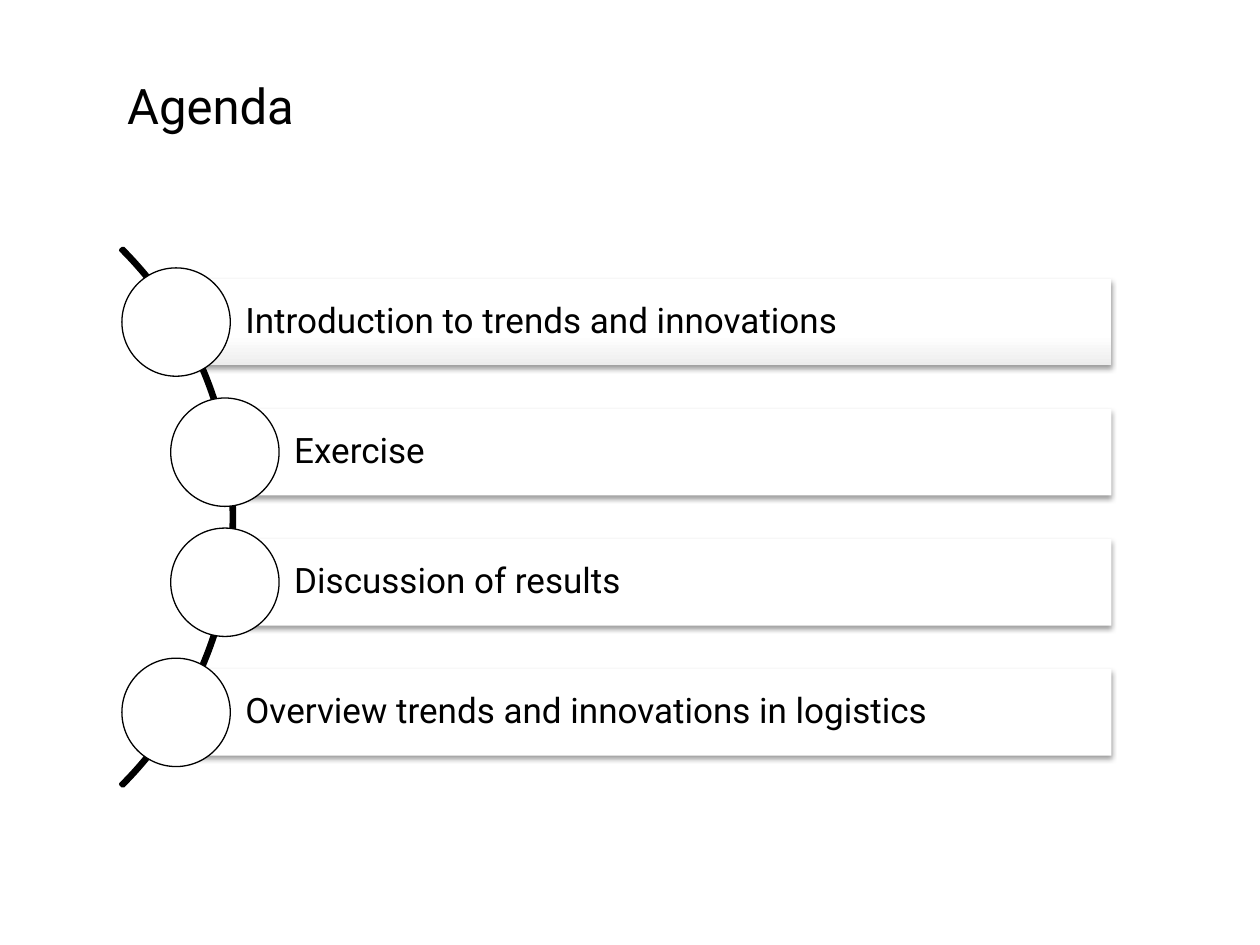
from dataclasses import dataclass
from math import sqrt

from lxml import etree
from pptx import Presentation
from pptx.dml.color import RGBColor
from pptx.enum.shapes import MSO_SHAPE
from pptx.enum.text import MSO_ANCHOR, PP_ALIGN
from pptx.oxml.ns import qn
from pptx.util import Inches, Pt

BLOCK_ARC, OVAL, RECTANGLE = MSO_SHAPE.BLOCK_ARC, MSO_SHAPE.OVAL, MSO_SHAPE.RECTANGLE
MIDDLE, LEFT = MSO_ANCHOR.MIDDLE, PP_ALIGN.LEFT


@dataclass(frozen=True)
class Theme:
    font: str = "Roboto"
    ink: RGBColor = RGBColor(0, 0, 0)
    paper: RGBColor = RGBColor(0xFF, 0xFF, 0xFF)
    shade: RGBColor = RGBColor(0xED, 0xED, 0xED)
    title_size: Pt = Pt(28)
    item_size: Pt = Pt(20)


@dataclass(frozen=True)
class Box:
    """A rectangle in inches."""
    left: float
    top: float
    width: float
    height: float

    def place(self):
        return [Inches(side) for side in (self.left, self.top, self.width, self.height)]


THEME = Theme()
TITLE_BOX = Box(0.91, 0.36, 6.62, 0.95)
AGENDA_BOX = Box(0.97, 2.04, 7.85, 4.13)
ITEMS = [
    "Introduction to trends and innovations",
    "Exercise",
    "Discussion of results",
    "Overview trends and innovations in logistics",
]


def write(frame, text, size):
    frame.word_wrap = True
    frame.vertical_anchor = MIDDLE
    para = frame.paragraphs[0]
    para.text = text
    para.alignment = LEFT
    para.font.name = THEME.font
    para.font.size = size
    para.font.color.rgb = THEME.ink
    return para


def add_title(page, box, text):
    title = page.shapes.title
    title.left, title.top, title.width, title.height = box.place()
    write(title.text_frame, text, THEME.title_size)


def add_plain(page, kind, box):
    shape = page.shapes.add_shape(kind, *box.place())
    shape.shadow.inherit = False
    return shape


def outline(shape, width):
    shape.line.color.rgb = THEME.ink
    shape.line.width = Pt(width)


def drop_shadow(shape):
    """Cast a soft shadow straight down."""
    effects = shape._element.spPr.find(qn("a:effectLst"))
    shadow = etree.SubElement(effects, qn("a:outerShdw"), blurRad=str(Pt(3.1)),
                              dist=str(Pt(1.6)), dir="5400000", rotWithShape="0")
    colour = etree.SubElement(shadow, qn("a:srgbClr"), val=str(THEME.ink))
    etree.SubElement(colour, qn("a:alpha"), val="38000")


def shade_upward(fill):
    fill.gradient()
    fill.gradient_angle = 90
    for stop, position, colour in zip(fill.gradient_stops, (0, 0.35),
                                      (THEME.shade, THEME.paper)):
        stop.position = position
        stop.color.rgb = colour


def add_arc(page, centre_x, centre_y, radius):
    arc = add_plain(page, BLOCK_ARC, Box(centre_x - radius, centre_y - radius,
                                         2 * radius, 2 * radius))
    # Angles run from 315 to 45 degrees; the band is hair-thin.
    for index, value in enumerate((189, 27, 0.004)):
        arc.adjustments[index] = value
    arc.fill.background()
    outline(arc, 2)


def add_item(page, box, text, shaded):
    """Place a bar filling the box, with a circle centred on its left edge."""
    bar = add_plain(page, RECTANGLE, box)
    if shaded:
        shade_upward(bar.fill)
    else:
        bar.fill.solid()
        bar.fill.fore_color.rgb = THEME.paper
    bar.line.fill.background()
    drop_shadow(bar)
    frame = bar.text_frame
    frame.margin_left = Inches(0.55)
    frame.margin_top = frame.margin_right = frame.margin_bottom = Inches(0.06)
    write(frame, text, THEME.item_size).line_spacing = 0.9

    size = box.height * 1.25
    circle = add_plain(page, OVAL, Box(box.left - size / 2,
                                       box.top + (box.height - size) / 2, size, size))
    circle.fill.solid()
    circle.fill.fore_color.rgb = THEME.paper
    outline(circle, 0.75)


def add_agenda(page, box, items):
    """Stack the items in equal rows, each starting on a common arc."""
    row = box.height / len(items)
    bar_height = row * 2 / 3
    centre_x = box.left - 2.13
    centre_y = box.top + box.height / 2
    radius = 2.99
    add_arc(page, centre_x, centre_y, radius + 0.03)
    for index, text in enumerate(items):
        middle = box.top + (index + 0.5) * row
        left = centre_x + sqrt(radius ** 2 - (middle - centre_y) ** 2)
        bar = Box(left, middle - bar_height / 2, box.left + box.width - left, bar_height)
        add_item(page, bar, text, shaded=index == 0)


def main():
    deck = Presentation()
    deck.slide_width, deck.slide_height = Inches(10), Inches(7.5)
    page = deck.slides.add_slide(deck.slide_layouts.get_by_name("Title Only"))
    add_title(page, TITLE_BOX, "Agenda")
    add_agenda(page, AGENDA_BOX, ITEMS)
    deck.save("out.pptx")


if __name__ == "__main__":
    main()
